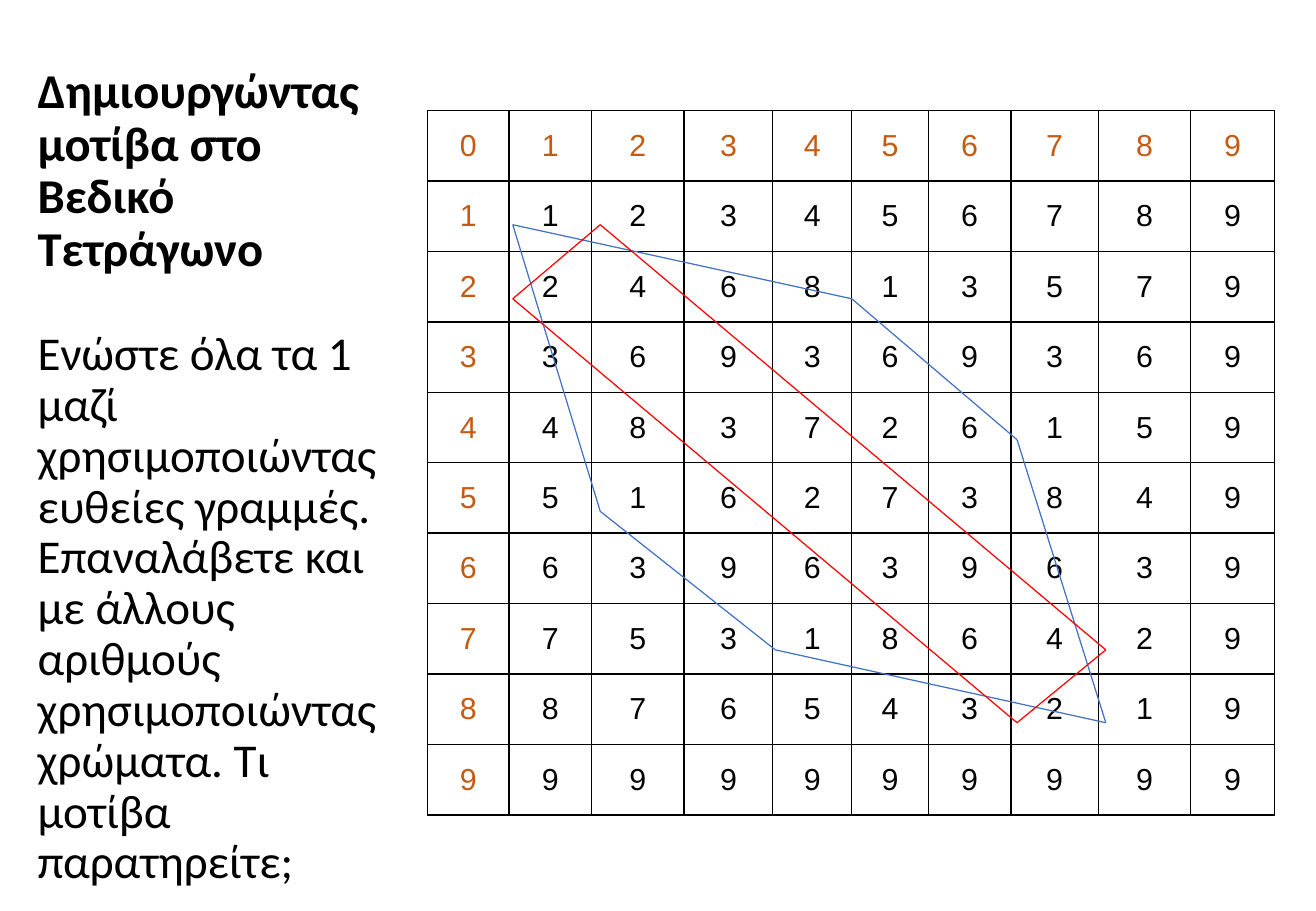
from itertools import pairwise

from lxml import etree
from pptx import Presentation
from pptx.dml.color import RGBColor
from pptx.enum.shapes import MSO_CONNECTOR
from pptx.enum.text import MSO_ANCHOR, MSO_AUTO_SIZE, PP_ALIGN
from pptx.oxml.ns import qn
from pptx.util import Pt

PX = 9144  # 100 px to the inch
PAGE_WIDTH, PAGE_HEIGHT = 1083, 750

BLACK = RGBColor(0x00, 0x00, 0x00)
ORANGE = RGBColor(0xC5, 0x5A, 0x11)
BLUE = RGBColor(0x44, 0x72, 0xC4)
RED = RGBColor(0xFF, 0x00, 0x00)

STRAIGHT = MSO_CONNECTOR.STRAIGHT
LEFT, CENTER = PP_ALIGN.LEFT, PP_ALIGN.CENTER
TOP, MIDDLE = MSO_ANCHOR.TOP, MSO_ANCHOR.MIDDLE
NO_AUTOFIT = MSO_AUTO_SIZE.NONE
TITLE_ONLY = 5

HEADING = "Δημιουργώντας μοτίβα στο Βεδικό Τετράγωνο"
TASK = ("Ενώστε όλα τα 1 μαζί χρησιμοποιώντας ευθείες γραμμές. "
        "Επαναλάβετε και με άλλους αριθμούς χρησιμοποιώντας χρώματα. "
        "Τι μοτίβα παρατηρείτε;")

TITLE_BOX = (21, 50, 319, 667)
SQUARE_ORIGIN = (352, 91)
COLUMN_WIDTHS = (67, 68, 76, 73, 65, 63, 68, 72, 76, 69)
ROW_HEIGHT = 58

# Closed outlines joining equal digits, as points from the square's corner
ONES = ((70, 94), (142, 330), (286, 444), (558, 504),
        (485, 271), (349, 155), (70, 94))
TWOS = ((70, 155), (142, 94), (558, 444), (485, 504), (70, 155))


def set_all(target, values):
    for name, value in values.items():
        setattr(target, name, value)


def write_para(para, text, para_format, font_format, color):
    set_all(para, para_format)
    span = para.add_run()
    span.text = text
    set_all(span.font, font_format)
    span.font.color.rgb = color


def fill_title(title, box):
    names = ("left", "top", "width", "height")
    set_all(title, {name: px * PX for name, px in zip(names, box)})
    frame = title.text_frame
    set_all(frame, {"word_wrap": True, "auto_size": NO_AUTOFIT,
                    "vertical_anchor": TOP,
                    "margin_left": 10 * PX, "margin_right": 10 * PX,
                    "margin_top": 5 * PX, "margin_bottom": 5 * PX})
    parts = ((HEADING, 28.8, True, 0), (TASK, 27.9, False, 31.6))
    for index, (text, size, bold, gap) in enumerate(parts):
        para = frame.add_paragraph() if index else frame.paragraphs[0]
        write_para(para, text,
                   {"alignment": LEFT, "line_spacing": 0.9,
                    "space_before": Pt(gap)},
                   {"name": "Calibri", "size": Pt(size), "bold": bold}, BLACK)


def add_borders(cell):
    properties = cell._tc.get_or_add_tcPr()
    for index, side in enumerate(("lnL", "lnR", "lnT", "lnB")):
        line = etree.Element(qn(f"a:{side}"), w=str(Pt(1)))
        fill = etree.SubElement(line, qn("a:solidFill"))
        etree.SubElement(fill, qn("a:srgbClr"), val=str(BLACK))
        properties.insert(index, line)


def digit_at(row, column):
    """Edge cells show their index, the others the digital root of the product."""
    if row == 0 or column == 0:
        return row + column
    return (row * column - 1) % 9 + 1


def add_vedic_square(page, origin):
    count = len(COLUMN_WIDTHS)
    left, top = origin
    table = page.shapes.add_table(
        count, count, left * PX, top * PX,
        sum(COLUMN_WIDTHS) * PX, count * ROW_HEIGHT * PX).table
    set_all(table, {"first_row": False, "horz_banding": False})
    for column, width in zip(table.columns, COLUMN_WIDTHS):
        column.width = width * PX
    for row in range(count):
        table.rows[row].height = ROW_HEIGHT * PX
        for column in range(count):
            cell = table.cell(row, column)
            set_all(cell, {"vertical_anchor": MIDDLE,
                           "margin_left": 8 * PX, "margin_right": 8 * PX,
                           "margin_top": 5 * PX, "margin_bottom": 5 * PX})
            cell.fill.background()
            add_borders(cell)
            write_para(cell.text_frame.paragraphs[0],
                       str(digit_at(row, column)), {"alignment": CENTER},
                       {"name": "Arial", "size": Pt(18), "bold": False},
                       BLACK if row and column else ORANGE)


def add_outline(shapes, origin, points, color):
    left, top = origin
    corners = [((left + x) * PX, (top + y) * PX) for x, y in points]
    for start, end in pairwise(corners):
        line = shapes.add_connector(STRAIGHT, *start, *end)
        line.line.color.rgb = color
        line.line.width = Pt(0.75)
        etree.SubElement(line._element.spPr, qn("a:effectLst"))


def build_slide(deck):
    page = deck.slides.add_slide(deck.slide_layouts[TITLE_ONLY])
    fill_title(page.shapes.title, TITLE_BOX)
    add_vedic_square(page, SQUARE_ORIGIN)
    add_outline(page.shapes, SQUARE_ORIGIN, ONES, BLUE)
    # The four red sides move together
    add_outline(page.shapes.add_group_shape().shapes, SQUARE_ORIGIN, TWOS, RED)


def main():
    deck = Presentation()
    deck.slide_width = PAGE_WIDTH * PX
    deck.slide_height = PAGE_HEIGHT * PX
    build_slide(deck)
    deck.save("out.pptx")


if __name__ == "__main__":
    main()
